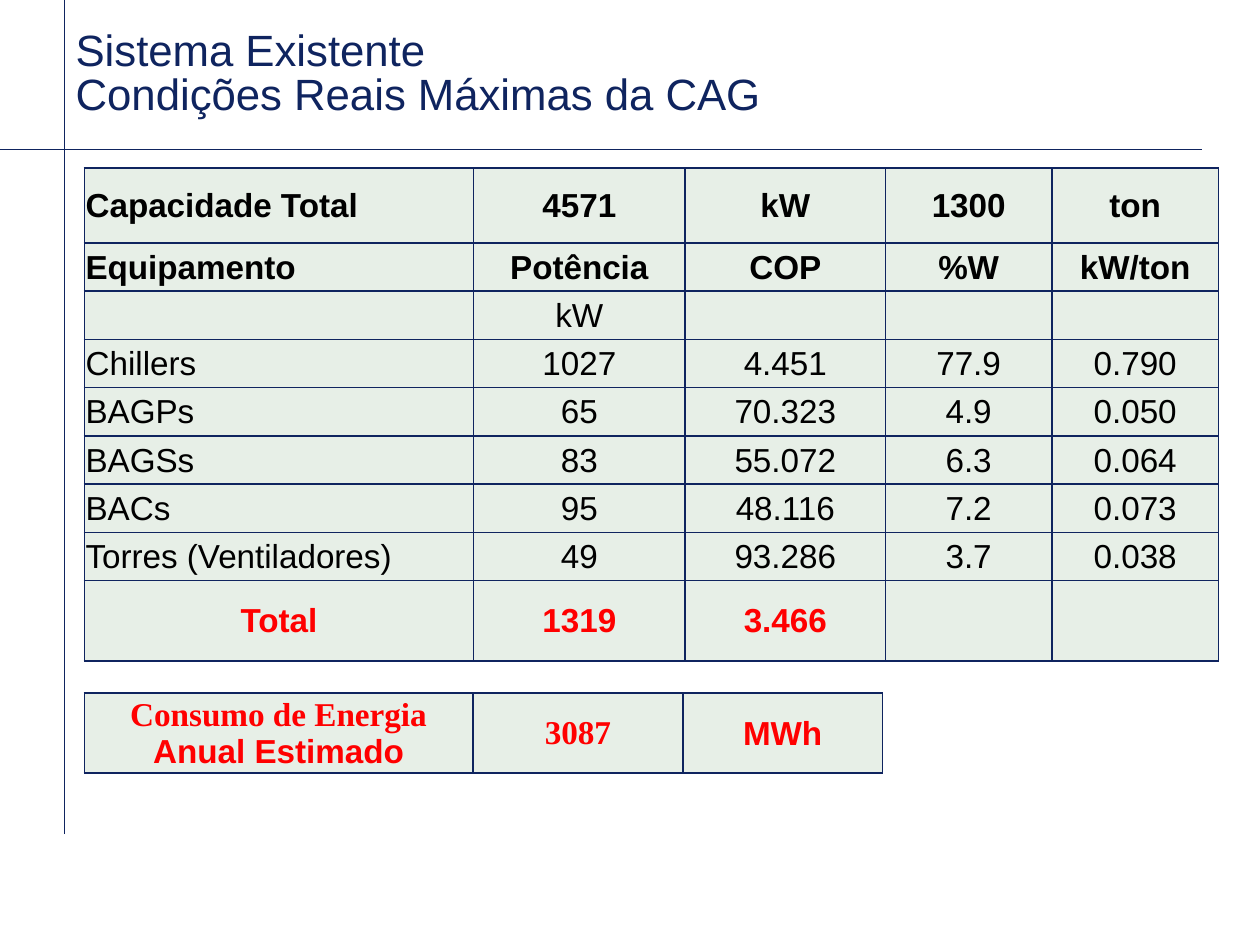
"""Build the slide with the real maximum conditions of the chilled water plant."""
from dataclasses import dataclass

from lxml import etree
from pptx import Presentation
from pptx import util as u
from pptx.dml.color import RGBColor
from pptx.enum import shapes, text
from pptx.oxml import ns

Pt = u.Pt
NAVY = RGBColor(0x0F, 0x24, 0x5F)
PALE_GREEN = RGBColor(0xE7, 0xEF, 0xE7)
BLACK = RGBColor(0, 0, 0)
RED = RGBColor(0xFF, 0, 0)
SANS, SERIF = "Arial", "Times New Roman"
TABLE_LEFT = 48.2
ROW_HEIGHT = 27.6
TOTAL_HEIGHT = 45.8


@dataclass(frozen=True)
class Row:
    values: tuple[str, ...]
    height: float = ROW_HEIGHT
    bold: bool = False
    color: RGBColor = BLACK
    center_label: bool = False
    serif: tuple[str, ...] = ()


@dataclass(frozen=True)
class Grid:
    top: float
    widths: tuple[float, ...]
    rows: tuple[Row, ...]


PLANT = Grid(96, (222.4, 121, 114.4, 95.2, 95.2), (
    Row(("Capacidade Total", "4571", "kW", "1300", "ton"), 42.8, bold=True),
    Row(("Equipamento", "Potência", "COP", "%W", "kW/ton"), bold=True),
    Row(("", "kW", "", "", "")),
    Row(("Chillers", "1027", "4.451", "77.9", "0.790")),
    Row(("BAGPs", "65", "70.323", "4.9", "0.050")),
    Row(("BAGSs", "83", "55.072", "6.3", "0.064")),
    Row(("BACs", "95", "48.116", "7.2", "0.073")),
    Row(("Torres (Ventiladores)", "49", "93.286", "3.7", "0.038")),
    Row(("Total", "1319", "3.466", "", ""), TOTAL_HEIGHT, True, RED, True),
))
ENERGY = Grid(396, (222, 120.2, 113.8), (
    Row(("Consumo de Energia\nAnual Estimado", "3087", "MWh"), TOTAL_HEIGHT,
        True, RED, True, ("Consumo de Energia", "3087")),
))


def add_rule(s, x1: float, y1: float, x2: float, y2: float) -> None:
    line = s.shapes.add_connector(shapes.MSO_CONNECTOR.STRAIGHT, Pt(x1), Pt(y1), Pt(x2), Pt(y2))
    line.line.color.rgb = NAVY
    line.line.width = Pt(0.75)
    etree.SubElement(line._element.spPr, ns.qn("a:effectLst"))


def add_title(s, title: str) -> None:
    sp = s.shapes.title
    sp.left, sp.top, sp.width, sp.height = Pt(36), Pt(18), Pt(546), Pt(54)
    tf = sp.text_frame
    tf.text = title
    tf.word_wrap = True
    tf.auto_size = text.MSO_AUTO_SIZE.NONE
    tf.vertical_anchor = text.MSO_ANCHOR.BOTTOM
    p = tf.paragraphs[0]
    p.alignment = text.PP_ALIGN.LEFT
    p.line_spacing = 0.85
    for r in p.runs:
        r.font.size, r.font.name, r.font.color.rgb = Pt(25), SANS, NAVY


def add_borders(cell) -> None:
    tc_pr = cell._tc.get_or_add_tcPr()
    for side in ("a:lnL", "a:lnR", "a:lnT", "a:lnB"):
        ln = etree.SubElement(tc_pr, ns.qn(side), w=str(Pt(1)))
        fill = etree.SubElement(ln, ns.qn("a:solidFill"))
        etree.SubElement(fill, ns.qn("a:srgbClr"), val=str(NAVY))


def fill_cell(cell, value: str, row: Row, centered: bool) -> None:
    add_borders(cell)
    cell.fill.solid()
    cell.fill.fore_color.rgb = PALE_GREEN
    cell.margin_left = cell.margin_right = cell.margin_top = Pt(0.75)
    cell.margin_bottom = 0
    cell.vertical_anchor = text.MSO_ANCHOR.MIDDLE
    cell.text_frame.text = value
    for p in cell.text_frame.paragraphs:
        p.alignment = text.PP_ALIGN.CENTER if centered else text.PP_ALIGN.LEFT
        for r in p.runs:
            r.font.size, r.font.bold = Pt(19), row.bold
            r.font.name = SERIF if r.text in row.serif else SANS
            r.font.color.rgb = row.color


def add_grid(s, grid: Grid) -> None:
    width, height = sum(grid.widths), sum(row.height for row in grid.rows)
    table = s.shapes.add_table(len(grid.rows), len(grid.widths), Pt(TABLE_LEFT),
                               Pt(grid.top), Pt(width), Pt(height)).table
    table.first_row = table.horz_banding = False
    for column, column_width in zip(table.columns, grid.widths):
        column.width = Pt(column_width)
    for i, row in enumerate(grid.rows):
        table.rows[i].height = Pt(row.height)
        for j, value in enumerate(row.values):
            fill_cell(table.cell(i, j), value, row, j > 0 or row.center_label)


def main() -> None:
    prs = Presentation()
    prs.slide_width, prs.slide_height = Pt(720), Pt(540)
    s = prs.slides.add_slide(prs.slide_layouts.get_by_name("Title Only"))
    add_rule(s, 36.9, 476.6, 36.9, 0)
    add_rule(s, 0, 85.6, 686.9, 85.6)
    add_title(s, "Sistema Existente\vCondições Reais Máximas da CAG")
    for grid in (PLANT, ENERGY):
        add_grid(s, grid)
    prs.save("out.pptx")


if __name__ == "__main__":
    main()
